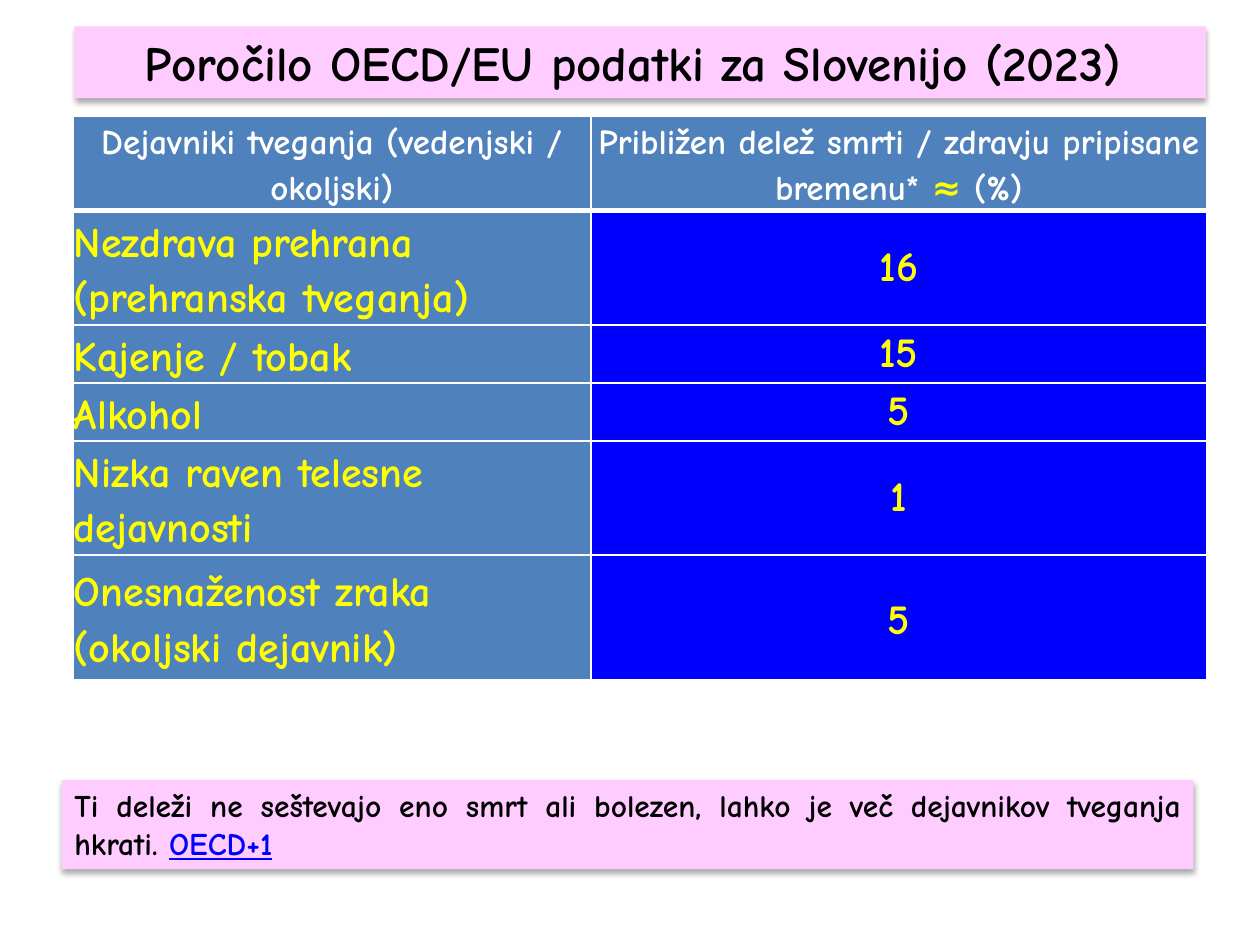
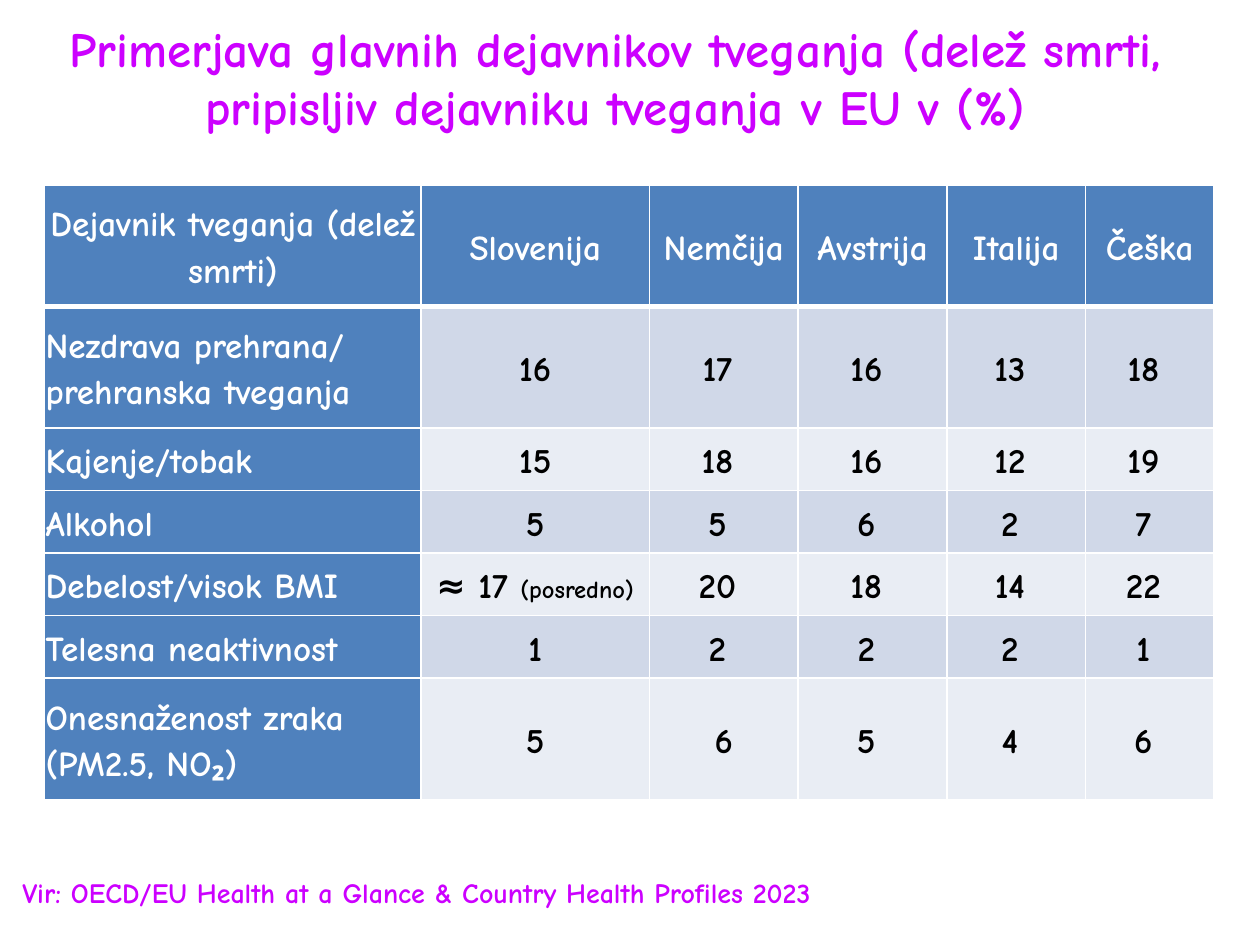
import dataclasses

import pptx
import pptx.dml.color
import pptx.enum.text
import pptx.util
from lxml import etree
from pptx.oxml.ns import qn

Cm, Pt = pptx.util.Cm, pptx.util.Pt
ALIGN = pptx.enum.text.PP_ALIGN
ANCHOR = pptx.enum.text.MSO_ANCHOR
AUTOSIZE = pptx.enum.text.MSO_AUTO_SIZE
TITLE_ONLY = 5


@dataclasses.dataclass(frozen=True)
class Theme:
    font: str = "Comic Neue"
    black: str = "000000"
    white: str = "FFFFFF"
    yellow: str = "FFFF00"
    blue: str = "0000FF"
    header: str = "4F81BD"
    pink: str = "FFCCFF"
    magenta: str = "CC00FF"
    bands: tuple = ("D0D8E8", "E9EDF4")
    title_size: int = 28
    risk_size: int = 24
    table_size: int = 20
    note_size: int = 18
    source_size: int = 16
    small_size: int = 14
    grid_line: float = 1
    header_line: float = 3
    line_spacing: float = 1.15


THEME = Theme()
SPACED = {"line_spacing": THEME.line_spacing}
PADDED = SPACED | {"space_after": Pt(10)}
CENTRED = {"alignment": ALIGN.CENTER}

SLOVENIA_HEADER = [
    "Dejavniki tveganja (vedenjski / okoljski)",
    [("Približen delež smrti / zdravju pripisane bremenu* ", {}),
     ("≈ ", {"color": THEME.yellow}), ("(%)", {})],
]
SLOVENIA_RISKS = [
    ["Nezdrava prehrana (prehranska tveganja)", "16"],
    ["Kajenje / tobak", "15"],
    ["Alkohol", "5"],
    ["Nizka raven telesne dejavnosti", "1"],
    ["Onesnaženost zraka (okoljski dejavnik)", "5"],
]
COUNTRY_HEADER = ["Dejavnik tveganja (delež smrti)", "Slovenija", "Nemčija",
                  "Avstrija", "Italija", "Češka"]
COUNTRY_RISKS = [
    ["Nezdrava prehrana/ prehranska tveganja", "16", "17 ", "16 ", "13 ", "18 "],
    ["Kajenje/tobak", "15", "18 ", "16 ", "12 ", "19 "],
    ["Alkohol", "5", "5 ", "6 ", "2 ", "7 "],
    ["Debelost/visok BMI",
     [("≈ 17 ", {}), ("(posredno)", {"size": THEME.small_size})],
     "20 ", "18 ", "14 ", "22 "],
    ["Telesna neaktivnost", "1", "2 ", "2 ", "2 ", "1 "],
    ["Onesnaženost zraka (PM2.5, NO₂)", "5", "6", "5 ", "4 ", "6 "],
]


def rgb(color):
    return pptx.dml.color.RGBColor.from_string(color)


def set_all(target, values):
    for name, value in values.items():
        setattr(target, name, value)


def write(frame, content, size, color, para_format):
    """Fill a frame's paragraph with a string or a list of (text, changes)."""
    para = frame.paragraphs[0]
    set_all(para, para_format)
    for text, changes in [(content, {})] if isinstance(content, str) else content:
        look = {"size": size, "color": color, "underline": None} | changes
        span = para.add_run()
        span.text = text
        set_all(span.font, {"name": THEME.font, "bold": True, "size": Pt(look["size"]),
                            "underline": look["underline"]})
        span.font.color.rgb = rgb(look["color"])


def place(shape, box):
    set_all(shape, dict(zip(("left", "top", "width", "height"), map(Cm, box))))


def fill_panel(shape):
    """Give a shape the pink fill and a soft shadow below."""
    shape.fill.solid()
    shape.fill.fore_color.rgb = rgb(THEME.pink)
    shape.line.fill.background()
    shape.shadow.inherit = False
    effects = shape.element.spPr.find(qn("a:effectLst"))
    shadow = etree.SubElement(effects, qn("a:outerShdw"), blurRad=str(Pt(3.5)),
                              dist=str(Pt(2.2)), dir="5400000", rotWithShape="0")
    tint = etree.SubElement(shadow, qn("a:srgbClr"), val=THEME.black)
    etree.SubElement(tint, qn("a:alpha"), val="32000")


def add_title(page, box, text, color):
    title = page.shapes.title
    place(title, box)
    set_all(title.text_frame, {"word_wrap": True, "auto_size": AUTOSIZE.NONE,
                               "vertical_anchor": ANCHOR.MIDDLE})
    write(title.text_frame, text, THEME.title_size, color, CENTRED)
    return title


def add_note(page, box, content, size, color, para_format):
    note = page.shapes.add_textbox(*map(Cm, box))
    note.text_frame.word_wrap = True
    write(note.text_frame, content, size, color, para_format)
    return note


def draw_borders(cell, top, bottom):
    props = cell._tc.get_or_add_tcPr()
    widths = {"L": THEME.grid_line, "R": THEME.grid_line, "T": top, "B": bottom}
    for side, width in widths.items():
        line = etree.SubElement(props, qn(f"a:ln{side}"), w=str(Pt(width)))
        solid = etree.SubElement(line, qn("a:solidFill"))
        etree.SubElement(solid, qn("a:srgbClr"), val=THEME.white)


def add_risk_table(page, corner, columns, heights, rows, cell_look):
    """Add a table; cell_look(row, column) gives fill, size, colour and paragraph format."""
    box = (*corner, sum(columns), sum(heights))
    table = page.shapes.add_table(len(rows), len(columns), *map(Cm, box)).table
    for column, width in zip(table.columns, columns):
        column.width = Cm(width)
    for row, height in zip(table.rows, heights):
        row.height = Cm(height)
    margins = {f"margin_{side}": Cm(0.02) for side in ("left", "right", "top", "bottom")}
    for r, values in enumerate(rows):
        top = THEME.header_line if r == 1 else THEME.grid_line
        bottom = THEME.header_line if r == 0 else THEME.grid_line
        for c, content in enumerate(values):
            cell = table.cell(r, c)
            fill, size, color, para_format = cell_look(r, c)
            set_all(cell, margins | {"vertical_anchor": ANCHOR.MIDDLE})
            draw_borders(cell, top, bottom)
            cell.fill.solid()
            cell.fill.fore_color.rgb = rgb(fill)
            write(cell.text_frame, content, size, color, para_format)


def slovenia_look(row, column):
    if row == 0:
        return THEME.header, THEME.table_size, THEME.white, PADDED | CENTRED
    if column == 0:
        return THEME.header, THEME.risk_size, THEME.yellow, PADDED
    spacing = PADDED if row == len(SLOVENIA_RISKS) else {}
    return THEME.blue, THEME.risk_size, THEME.yellow, spacing | CENTRED


def country_look(row, column):
    if row == 0 or column == 0:
        aligned = CENTRED if row == 0 else {}
        return THEME.header, THEME.table_size, THEME.white, SPACED | aligned
    return THEME.bands[(row - 1) % 2], THEME.table_size, THEME.black, SPACED | CENTRED


def build_slovenia_page(page):
    title = add_title(page, (1.5, 0.53, 22.81, 1.45),
                      [("Poročilo OECD/EU podatki za Slovenijo (2023)", {}),
                       (" ", {"size": THEME.risk_size})], THEME.black)
    add_risk_table(page, (1.47, 2.34), (10.44, 12.42),
                   (1.89, 2.3, 1.17, 1.17, 2.3, 2.52),
                   [SLOVENIA_HEADER, *SLOVENIA_RISKS], slovenia_look)
    note = add_note(page, (1.25, 15.72, 22.81, 1.8),
                    [("Ti deleži ne seštevajo eno smrt ali bolezen, lahko je več "
                      "dejavnikov tveganja hkrati. ", {}),
                     ("OECD+1", {"color": THEME.blue, "underline": True})],
                    THEME.note_size, THEME.black, {"alignment": ALIGN.JUSTIFY})
    for panel in (title, note):
        fill_panel(panel)


def build_country_page(page):
    add_title(page, (0.5, 0.23, 23.8, 2.64),
              "Primerjava glavnih dejavnikov tveganja (delež smrti, "
              "pripisljiv dejavniku tveganja v EU v (%)", THEME.magenta)
    add_risk_table(page, (0.9, 3.73), (7.59, 4.6, 3, 3, 2.79, 2.59),
                   (2.45, 2.45, *[1.26] * 4, 2.45),
                   [COUNTRY_HEADER, *COUNTRY_RISKS], country_look)
    add_note(page, (0.2, 17.53, 24.31, 0.94),
             "Vir: OECD/EU Health at a Glance & Country Health Profiles 2023",
             THEME.source_size, THEME.magenta, {})


def main():
    deck = pptx.Presentation()
    set_all(deck, {"slide_width": Cm(25.4), "slide_height": Cm(19.05)})
    for build_page in (build_slovenia_page, build_country_page):
        build_page(deck.slides.add_slide(deck.slide_layouts[TITLE_ONLY]))
    deck.save("out.pptx")


if __name__ == "__main__":
    main()
